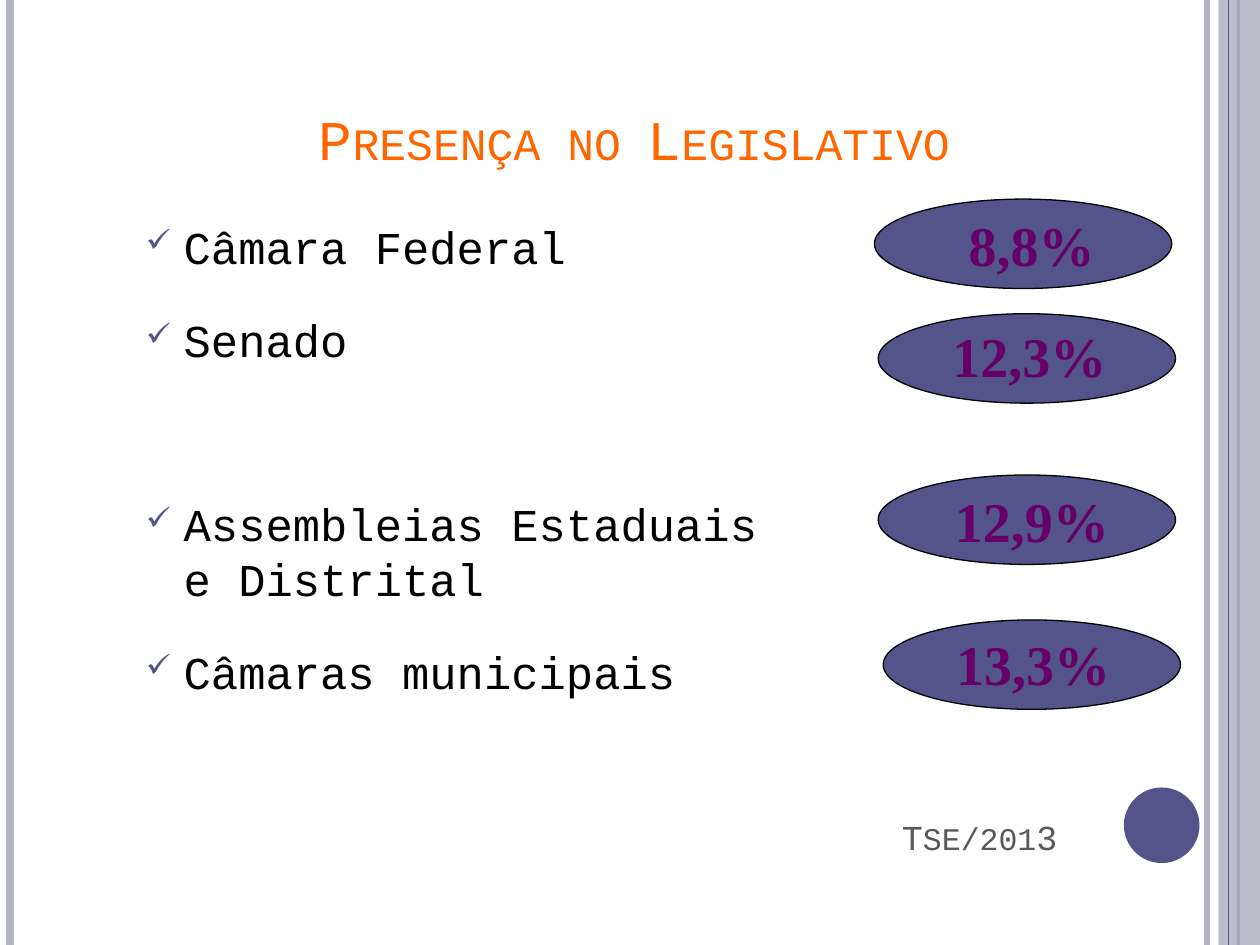
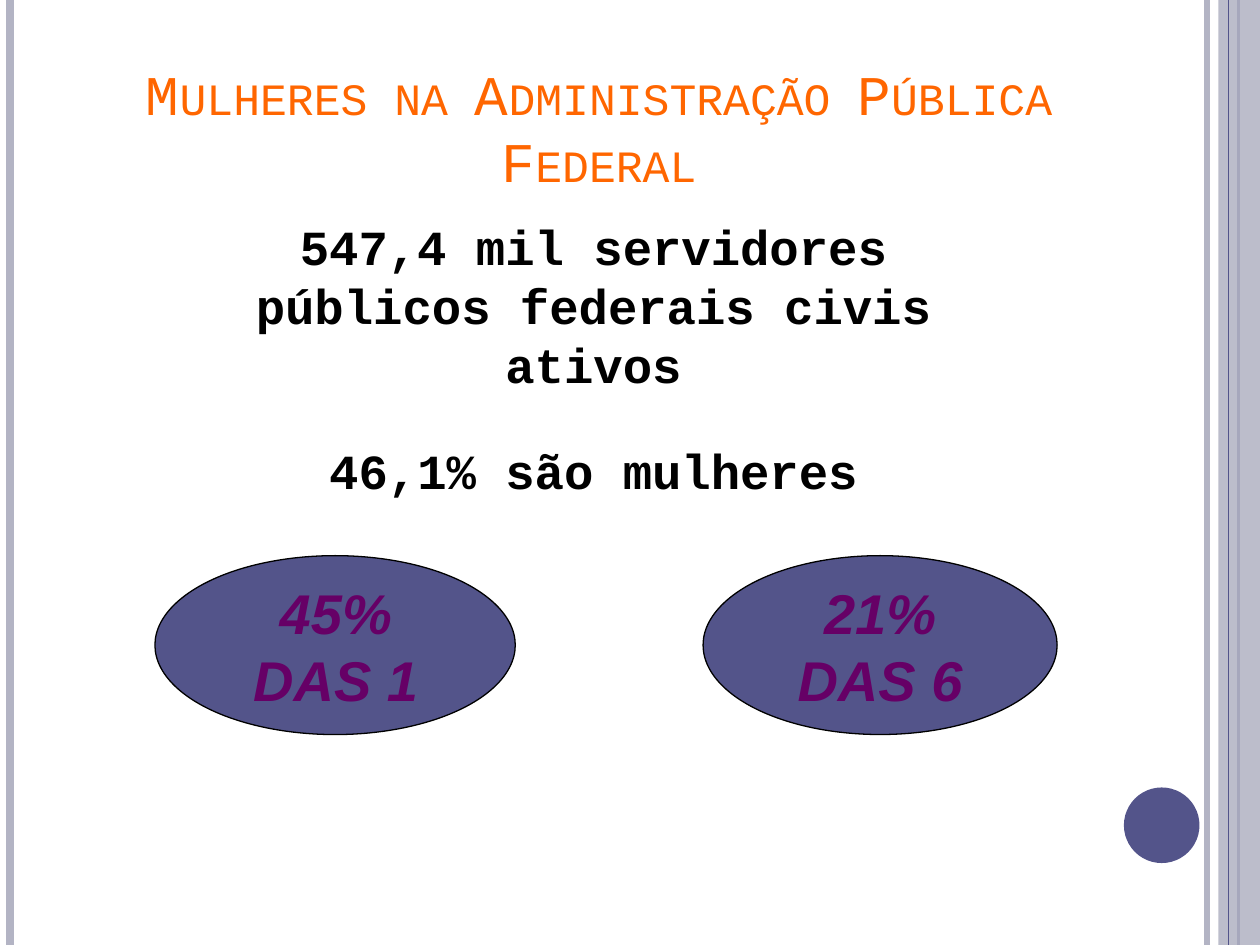
from lxml import etree
from pptx import Presentation
from pptx.dml.color import RGBColor
from pptx.enum.shapes import MSO_CONNECTOR, MSO_SHAPE
from pptx.enum.text import MSO_ANCHOR, PP_ALIGN
from pptx.oxml.ns import qn
from pptx.util import Pt

PX = 9144  # EMU in one px, 100 px to the inch
WIDTH, HEIGHT = 1000, 750
COLORS = {"indigo": "53548A", "band": "B3B4C4", "title": "FF6600",
          "figure": "660066", "text": "000000", "source": "595959"}
TITLE = {"size": 32, "font": "Courier New", "color": "title", "small_caps": True}
BODY = {"size": 26, "font": "Courier New", "color": "text"}
FACTS = {"size": 28, "font": "Courier New", "color": "text", "bold": True}
PERCENT = {"size": 32, "font": "Times New Roman", "color": "figure", "bold": True}
SHARE = {"size": 32, "font": "Arial", "color": "figure", "bold": True, "italic": True}
SOURCE = {"size": 18, "font": "Courier New", "color": "source"}


def add_text(slide, box, paragraphs, style, align=PP_ALIGN.LEFT,
             anchor=MSO_ANCHOR.TOP, wrap=True):
    """Each paragraph is (space before in points, [(text, size or None), ...])."""
    frame = slide.shapes.add_textbox(*[v * PX for v in box]).text_frame
    frame.word_wrap = wrap
    frame.vertical_anchor = anchor
    for i, (space, runs) in enumerate(paragraphs):
        paragraph = frame.add_paragraph() if i else frame.paragraphs[0]
        paragraph.alignment = align
        paragraph.space_before = Pt(space)
        for text, size in runs:
            run = paragraph.add_run()
            run.text = text
            run.font.size = Pt(size or style["size"])
            run.font.name = style["font"]
            run.font.color.rgb = RGBColor.from_string(COLORS[style["color"]])
            run.font.bold = style.get("bold", False)
            run.font.italic = style.get("italic", False)
            if style.get("small_caps"):
                run.font._element.set("cap", "small")
    return frame


def add_solid(slide, kind, box, color, outlined=False):
    solid = slide.shapes.add_shape(kind, *[v * PX for v in box])
    solid.shadow.inherit = False
    solid.fill.solid()
    solid.fill.fore_color.rgb = RGBColor.from_string(COLORS[color])
    if outlined:
        solid.line.color.rgb = RGBColor.from_string(COLORS["text"])
        solid.line.width = Pt(0.75)
    else:
        solid.line.fill.background()
    return solid


prs = Presentation()
prs.slide_width, prs.slide_height = WIDTH * PX, HEIGHT * PX
legislature, administration = [prs.slides.add_slide(prs.slide_layouts[6]) for _ in range(2)]

# Frame shared by both slides; the translucent band covers the line at 983
for slide in (legislature, administration):
    for x, color, weight in [(958, "band", 3), (8, "band", 4.5), (983, "indigo", 1.5),
                             (None, None, None), (975, "indigo", 0.75)]:
        if x is None:
            band = add_solid(slide, MSO_SHAPE.RECTANGLE, (967, 0, 33, HEIGHT), "band")
            band_color = band.fill._xPr.find(qn("a:solidFill"))[0]
            etree.SubElement(band_color, qn("a:alpha"), val="87000")
            continue
        rule = slide.shapes.add_connector(MSO_CONNECTOR.STRAIGHT, x * PX, 0, x * PX, HEIGHT * PX)
        rule.line.color.rgb = RGBColor.from_string(COLORS[color])
        rule.line.width = Pt(weight)
        etree.SubElement(rule._element.spPr, qn("a:effectLst"))
    add_solid(slide, MSO_SHAPE.OVAL, (892, 625, 60, 60), "indigo")

# Slide 1: share of women in each legislative house
add_text(legislature, (35, 44, 937, 97), [(0, [("Presença no Legislativo", None)])],
         TITLE, PP_ALIGN.CENTER, MSO_ANCHOR.BOTTOM)
houses = [(0, "Câmara Federal"), (22, "Senado"),
          (74, "Assembleias Estaduais e Distrital"), (22, "Câmaras municipais")]
house_list = add_text(legislature, (106, 169, 520, 485),
                      [(space, [(house, None)]) for space, house in houses], BODY)
for paragraph in house_list.paragraphs:
    props = paragraph._p.get_or_add_pPr()
    props.set("marL", str(30 * PX))
    props.set("indent", str(-30 * PX))
    bullet_color = etree.SubElement(props, qn("a:buClr"))
    etree.SubElement(bullet_color, qn("a:srgbClr"), val=COLORS["indigo"])
    etree.SubElement(props, qn("a:buSzPct"), val="70000")
    etree.SubElement(props, qn("a:buChar"), char="✓")

for percent, oval_at, text_at, wrap in [
        ("8,8%", (694, 158), (759, 162), True),
        ("12,3%", (697, 249), (746, 250), True),
        ("12,9%", (697, 377), (748, 381), False),
        ("13,3%", (701, 492), (749, 495), False)]:
    add_solid(legislature, MSO_SHAPE.OVAL, (*oval_at, 236, 71), "indigo", outlined=True)
    add_text(legislature, (*text_at, 146, 63), [(0, [(percent, None)])], PERCENT, wrap=wrap)
add_text(legislature, (674, 642, 175, 44),
         [(0, [("T", 20), ("SE/201", None), ("3", 20)])], SOURCE, PP_ALIGN.RIGHT)

# Slide 2: women in the federal civil service
add_text(administration, (67, 42, 817, 118),
         [(0, [("Mulheres na Administração Pública Federal", None)])], TITLE, PP_ALIGN.CENTER)
add_text(administration, (125, 167, 692, 188),
         [(0, [("547,4 mil servidores públicos federais civis ativos", None)]),
          (27, [("46,1% são mulheres", None)])], FACTS, PP_ALIGN.CENTER)
for share, oval_box, text_box in [
        ("45% DAS 1", (123, 441, 286, 142), (184, 454, 165, 99)),
        ("21% DAS 6", (558, 441, 281, 142), (611, 454, 175, 118))]:
    add_solid(administration, MSO_SHAPE.OVAL, oval_box, "indigo", outlined=True)
    add_text(administration, text_box, [(0, [(share, None)])], SHARE, PP_ALIGN.CENTER)

prs.save("out.pptx")
